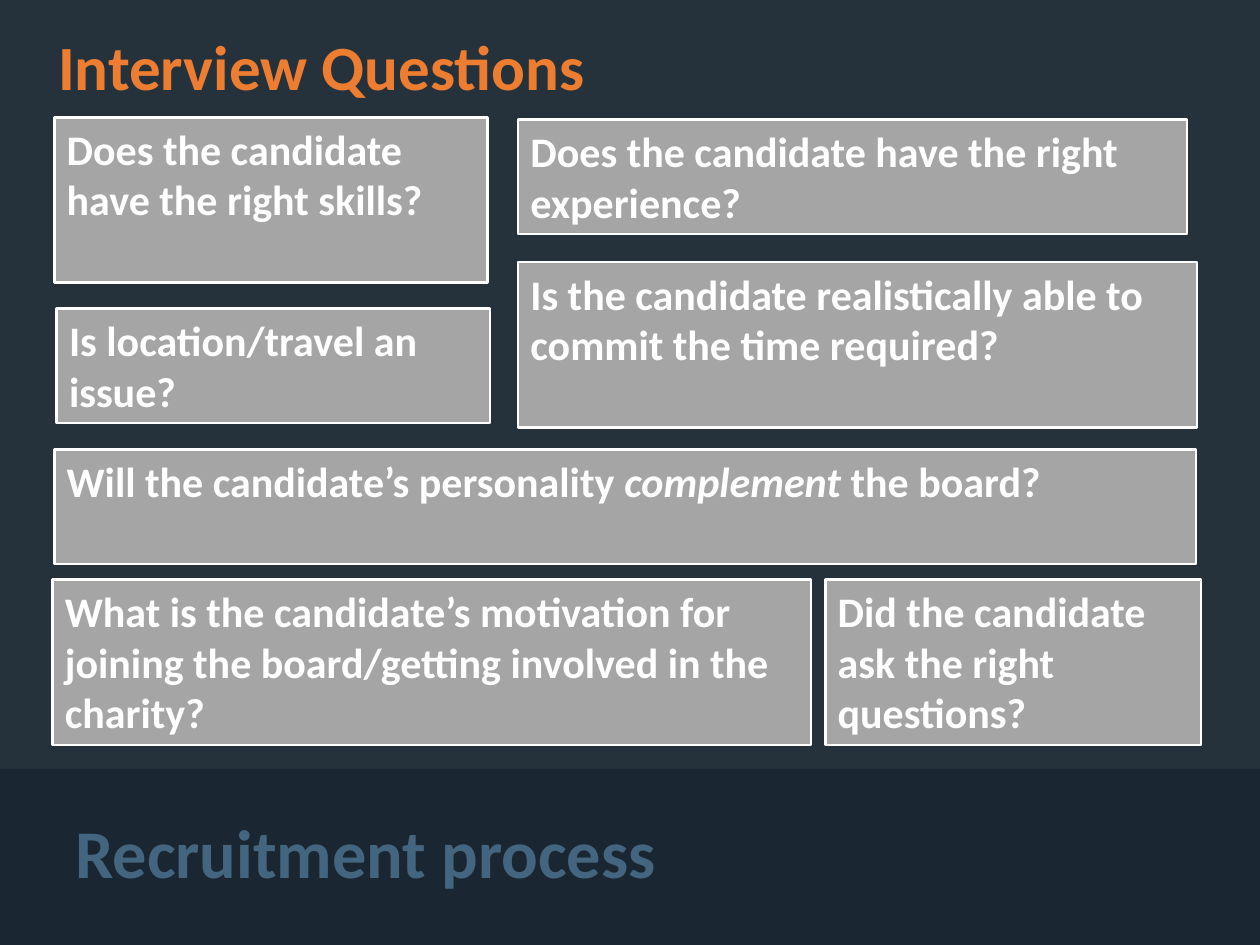
from pptx import Presentation
from pptx.dml.color import RGBColor
from pptx.enum.shapes import MSO_SHAPE
from pptx.enum.text import MSO_ANCHOR, MSO_AUTO_SIZE, PP_ALIGN
from pptx.util import Pt

WIDTH, HEIGHT = 720, 540
BAND_TOP = 439.2
ONE_LINE, TALL = 65.4, 94.5
QUESTIONS = [
    ("Does the candidate have the right skills?", 31, 67, 247.7, TALL),
    ("Does the candidate have the right experience?", 296, 68.4, 382.3, ONE_LINE),
    ("Is the candidate realistically able to commit the time required?",
     296, 149.8, 388, TALL),
    ("Is location/travel an issue?", 32.4, 176.4, 247.7, ONE_LINE),
    ("Will the candidate’s personality *complement* the board?",
     31, 257, 652.5, ONE_LINE),
    ("What is the candidate’s motivation for joining the board/getting "
     "involved in the charity?", 30, 331.2, 433.4, TALL),
    ("Did the candidate ask the right questions?", 471.6, 331.2, 214.6, TALL),
]


def color(value):
    return RGBColor.from_string(value)


class InterviewSlide:
    font_name = "Calibri"
    backdrop, band_fill = "25323C", "1A2732"
    title_ink, footer_ink = "ED7D31", "446580"
    card_fill, card_ink = "A5A5A5", "FFFFFF"

    def __init__(self, deck):
        self.slide = deck.slides.add_slide(deck.slide_layouts[5])
        fill = self.slide.background.fill
        fill.solid()
        fill.fore_color.rgb = color(self.backdrop)

    def style(self, paragraph, size, ink, line_spacing=1.0):
        paragraph.alignment = PP_ALIGN.LEFT
        paragraph.line_spacing = line_spacing
        for run in paragraph.runs:
            run.font.name = self.font_name
            run.font.size = Pt(size)
            run.font.bold = True
            run.font.color.rgb = color(ink)

    def frame(self, holder, anchor):
        frame = holder.text_frame
        frame.word_wrap = True
        frame.auto_size = MSO_AUTO_SIZE.NONE
        frame.vertical_anchor = anchor
        return frame

    def rectangle(self, left, top, width, height, fill):
        box = self.slide.shapes.add_shape(
            MSO_SHAPE.RECTANGLE, Pt(left), Pt(top), Pt(width), Pt(height))
        box.shadow.inherit = False
        box.fill.solid()
        box.fill.fore_color.rgb = color(fill)
        return box

    def title(self, text, left, top, width, height):
        heading = self.slide.shapes.title
        heading.left, heading.top = Pt(left), Pt(top)
        heading.width, heading.height = Pt(width), Pt(height)
        frame = self.frame(heading, MSO_ANCHOR.TOP)
        frame.text = text
        self.style(frame.paragraphs[0], 36, self.title_ink, 0.9)

    def band(self, top):
        strip = self.rectangle(0, top, WIDTH, HEIGHT - top, self.band_fill)
        strip.line.fill.background()

    def question(self, text, left, top, width, height):
        card = self.rectangle(left, top, width, height, self.card_fill)
        card.line.color.rgb = color(self.card_ink)
        card.line.width = Pt(1.5)
        paragraph = self.frame(card, MSO_ANCHOR.TOP).paragraphs[0]
        for index, part in enumerate(text.split("*")):
            run = paragraph.add_run()
            run.text = part
            run.font.italic = index % 2 == 1
        self.style(paragraph, 24, self.card_ink)

    def footer(self, text, left, top, width, height):
        label = self.slide.shapes.add_textbox(
            Pt(left), Pt(top), Pt(width), Pt(height))
        frame = self.frame(label, MSO_ANCHOR.BOTTOM)
        frame.text = text
        self.style(frame.paragraphs[0], 39, self.footer_ink, 0.9)


def main():
    deck = Presentation()
    deck.slide_width, deck.slide_height = Pt(WIDTH), Pt(HEIGHT)
    page = InterviewSlide(deck)
    page.band(BAND_TOP)
    page.title("Interview Questions", 26, 17, 648, 84)
    for question in QUESTIONS:
        page.question(*question)
    page.footer("Recruitment process", 36, 448.6, 517.7, 65.5)
    deck.save("out.pptx")


if __name__ == "__main__":
    main()
